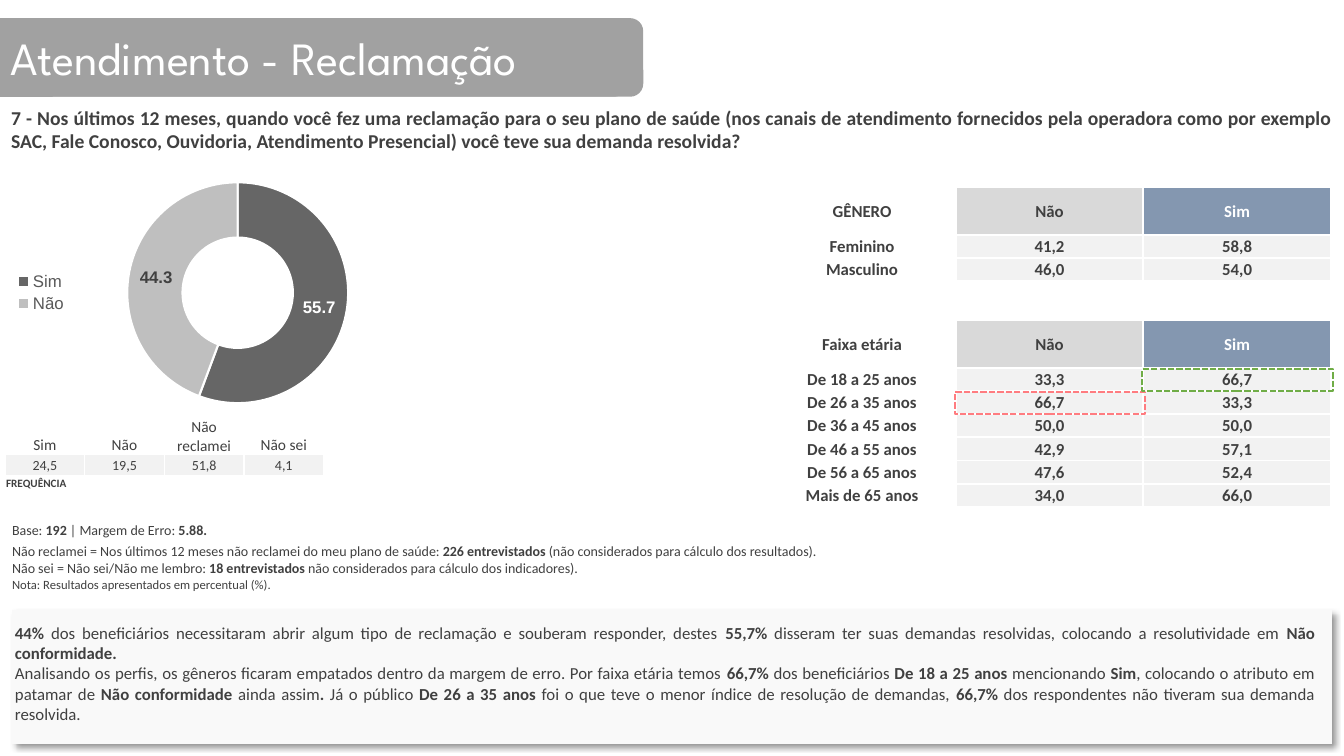
from lxml import etree
from pptx import Presentation
from pptx.chart.data import CategoryChartData
from pptx.dml.color import RGBColor
from pptx.enum.chart import XL_CHART_TYPE, XL_LEGEND_POSITION
from pptx.enum.dml import MSO_LINE
from pptx.enum.shapes import MSO_SHAPE
from pptx.enum.text import MSO_ANCHOR, MSO_AUTO_SIZE, PP_ALIGN
from pptx.oxml import parse_xml
from pptx.oxml.ns import nsdecls, qn
from pptx.util import Inches, Pt

DARK, WHITE, BANNER, PANEL = "404040", "FFFFFF", "A1A1A1", "F9F9F9"
NO_FILL, YES_FILL, VALUE_FILL = "D9D9D9", "8497B0", "F2F2F2"

TITLE = "Atendimento - Reclamação"
# Text between double asterisks is bold.
QUESTION = [
    "**7 - Nos últimos 12 meses, quando você fez uma reclamação para o seu plano de saúde "
    "(nos canais de atendimento fornecidos pela operadora como por exemplo SAC, Fale Conosco, "
    "Ouvidoria, Atendimento Presencial) você teve sua demanda resolvida?**"]
NOTES = [
    (10, 0.21, ["Base: **192** | Margem de Erro: **5.88.**"]),
    (10, 0.34, [
        "Não reclamei = Nos últimos 12 meses não reclamei do meu plano de saúde: "
        "**226 entrevistados **(não considerados para cálculo dos resultados).",
        "Não sei = Não sei/Não me lembro: **18 entrevistados** não considerados para "
        "cálculo dos indicadores)."]),
    (9, 0.21, ["Nota: Resultados apresentados em percentual (%)."]),
]
ANALYSIS = [
    "**44%** dos beneficiários necessitaram abrir algum tipo de reclamação e souberam responder, "
    "destes **55,7%** disseram ter suas demandas resolvidas, colocando a resolutividade em "
    "**Não conformidade.**",
    "Analisando os perfis, os gêneros ficaram empatados dentro da margem de erro. Por faixa etária "
    "temos **66,7% **dos beneficiários **De 18 a 25 anos **mencionando **Sim**, colocando o atributo "
    "em patamar de **Não conformidade **ainda assim**. **Já o público **De 26 a 35 anos **foi o que "
    "teve o menor índice de resolução de demandas, **66,7%** dos respondentes não tiveram sua "
    "demanda resolvida."]
PROFILES = [
    ("GÊNERO", "Não", "Sim"),
    ("Feminino", "41,2", "58,8"),
    ("Masculino", "46,0", "54,0"),
    ("", "", ""),
    ("Faixa etária", "Não", "Sim"),
    ("De 18 a 25 anos", "33,3", "66,7"),
    ("De 26 a 35 anos", "66,7", "33,3"),
    ("De 36 a 45 anos", "50,0", "50,0"),
    ("De 46 a 55 anos", "42,9", "57,1"),
    ("De 56 a 65 anos", "47,6", "52,4"),
    ("Mais de 65 anos", "34,0", "66,0"),
]
PROFILE_HEADERS, PROFILE_GAP = (0, 4), 3
PROFILE_LEFT, PROFILE_TOP, PROFILE_COLUMN = 7.62, 1.86, 1.86
HIGHLIGHTS = [(6, 1, "FF7C80"), (5, 2, "70AD47")]  # row, column, colour
FREQUENCY = [("Sim", "Não", "Não reclamei", "Não sei"),
             ("24,5", "19,5", "51,8", "4,1"),
             ("FREQUÊNCIA", "", "", "")]
ANSWERS = [("Sim", 55.7, "666666", WHITE), ("Não", 44.3, "BFBFBF", DARK)]
PLOT_LAYOUT = {"x": 0.3, "y": 0.06, "w": 0.56, "h": 0.88}


def color(value):
    return RGBColor.from_string(value)


def style_font(font, size, value=DARK, bold=False, name="Calibri"):
    font.name, font.size, font.bold = name, Pt(size), bold
    font.color.rgb = color(value)


def write(text_frame, lines, size, align=PP_ALIGN.LEFT, value=DARK):
    """Fill a text frame, switching bold at each double asterisk."""
    for number, line in enumerate(lines):
        paragraph = text_frame.add_paragraph() if number else text_frame.paragraphs[0]
        paragraph.alignment = align
        style_font(paragraph.font, size, value)
        for index, piece in enumerate(line.split("**")):
            if piece:
                run = paragraph.add_run()
                run.text = piece
                style_font(run.font, size, value, index % 2 == 1)
        if not line:
            etree.SubElement(paragraph._p, qn("a:endParaRPr"), sz=str(size * 100))


def add_box(shapes, preset, box, fill=None):
    shape = shapes.add_shape(preset, *map(Inches, box))
    shape.shadow.inherit = False
    shape.line.fill.background()
    if fill:
        shape.fill.solid()
        shape.fill.fore_color.rgb = color(fill)
    else:
        shape.fill.background()
    return shape


def add_text(shapes, box, lines, size, insets):
    text_frame = shapes.add_textbox(*map(Inches, box)).text_frame
    text_frame.word_wrap = True
    text_frame.margin_left = text_frame.margin_right = Inches(insets[0])
    text_frame.margin_top = text_frame.margin_bottom = Inches(insets[1])
    write(text_frame, lines, size, PP_ALIGN.JUSTIFY)


def add_plain_table(shapes, left, top, columns, rows):
    frame = shapes.add_table(len(rows), len(columns), *map(Inches, (left, top, sum(columns), sum(rows))))
    table = frame.table
    table.first_row = table.horz_banding = False
    for column, width in zip(table.columns, columns):
        column.width = Inches(width)
    for row, height in zip(table.rows, rows):
        row.height = Inches(height)
    return table


def fill_cell(cell, lines, size, align=PP_ALIGN.LEFT, value=DARK, fill=None,
              anchor=MSO_ANCHOR.TOP, border=0):
    cell.margin_left = cell.margin_right = cell.margin_top = Inches(0.01)
    cell.margin_bottom = 0
    cell.vertical_anchor = anchor
    write(cell.text_frame, lines, size, align, value)
    if border:
        for side in ("lnL", "lnR", "lnT", "lnB"):
            cell._tc.get_or_add_tcPr().append(parse_xml(
                f'<a:{side} {nsdecls("a")} w="{Pt(border)}"><a:solidFill>'
                f'<a:srgbClr val="{WHITE}"/></a:solidFill></a:{side}>'))
    if fill:
        cell.fill.solid()
        cell.fill.fore_color.rgb = color(fill)
    else:
        cell.fill.background()


presentation = Presentation()
presentation.slide_width, presentation.slide_height = Inches(13.33), Inches(7.5)
slide = presentation.slides.add_slide(presentation.slide_layouts[5])
shapes = slide.shapes

# Title banner and question
for left, width in ((-0.27, 6.49), (0, 6.38)):
    add_box(shapes, MSO_SHAPE.ROUNDED_RECTANGLE, (left, 0.18, width, 0.78), BANNER)
title = shapes.title
title.left, title.top, title.width, title.height = map(Inches, (0, 0.18, 6.38, 0.78))
title.element.getparent().append(title.element)
title.text_frame.text = TITLE
title.text_frame.auto_size = MSO_AUTO_SIZE.NONE
title.text_frame.vertical_anchor = MSO_ANCHOR.MIDDLE
title.text_frame.paragraphs[0].alignment = PP_ALIGN.LEFT
style_font(title.text_frame.paragraphs[0].runs[0].font, 33, WHITE, name="League Spartan")
add_text(shapes, (0, 0.99, 13.33, 0.58), QUESTION, 14, (0.11, 0.06))

# Notes
notes = add_plain_table(shapes, 0.11, 5.17, [9.76], [height for _, height, _ in NOTES])
for row, (size, _, lines) in enumerate(NOTES):
    fill_cell(notes.cell(row, 0), lines, size)

# Analysis panel
panel = add_box(shapes, MSO_SHAPE.RECTANGLE, (0.12, 6.05, 13.09, 1.33), PANEL)
panel._element.spPr.find(qn("a:effectLst")).append(parse_xml(
    f'<a:outerShdw {nsdecls("a")} blurRad="{Pt(4)}" dist="{Pt(3)}" dir="2700000" algn="tl" '
    'rotWithShape="0"><a:srgbClr val="000000"><a:alpha val="40000"/></a:srgbClr></a:outerShdw>'))
add_text(shapes, (0.05, 6.13, 13.09, 1.11), ANALYSIS, 12, (0.1, 0.05))

# Profile table with highlighted cells
heights = [0.47 if row in PROFILE_HEADERS else 0.39 if row == PROFILE_GAP else 0.23
           for row in range(len(PROFILES))]
profiles = add_plain_table(shapes, PROFILE_LEFT, PROFILE_TOP, [PROFILE_COLUMN] * 3, heights)
profiles.cell(PROFILE_GAP, 0).merge(profiles.cell(PROFILE_GAP, 2))
for row, values in enumerate(PROFILES):
    header = row in PROFILE_HEADERS
    fills = (None, NO_FILL, YES_FILL) if header else (None, VALUE_FILL, VALUE_FILL)
    for column, text in enumerate(values):
        fill_cell(profiles.cell(row, column), [f"**{text}**" if text else ""], 12, PP_ALIGN.CENTER,
                  WHITE if header and column == 2 else DARK,
                  None if row == PROFILE_GAP else fills[column], MSO_ANCHOR.MIDDLE, 1.5)
for row, column, value in HIGHLIGHTS:
    highlight = add_box(shapes, MSO_SHAPE.RECTANGLE, (
        PROFILE_LEFT + column * PROFILE_COLUMN - 0.01, PROFILE_TOP + sum(heights[:row]) + 0.01, 1.89, 0.22))
    highlight.line.color.rgb = color(value)
    highlight.line.width = Pt(1.5)
    highlight.line.dash_style = MSO_LINE.SQUARE_DOT

# Frequency table
frequency = add_plain_table(shapes, 0.05, 4.13, [0.79] * 4, [0.38, 0.21, 0.21])
frequency.cell(2, 0).merge(frequency.cell(2, 2))
frequency_styles = [(11, PP_ALIGN.CENTER, DARK, None, MSO_ANCHOR.BOTTOM, 1),
                    (10, PP_ALIGN.CENTER, DARK, VALUE_FILL, MSO_ANCHOR.MIDDLE, 1),
                    (8, PP_ALIGN.LEFT, DARK, None, MSO_ANCHOR.TOP, 1)]
for row, (values, style) in enumerate(zip(FREQUENCY, frequency_styles)):
    for column, text in enumerate(values):
        fill_cell(frequency.cell(row, column), [f"**{text}**" if row == 2 and text else text], *style)

# Doughnut chart
chart_data = CategoryChartData(number_format="0.0")
chart_data.categories = [answer[0] for answer in ANSWERS]
chart_data.add_series("Series 1", [answer[1] for answer in ANSWERS])
chart = shapes.add_chart(XL_CHART_TYPE.DOUGHNUT, *map(Inches, (0.05, 1.66, 3.98, 2.49)), chart_data).chart
style_font(chart.font, 10, "000000", name="Arial")
chart.has_title = False
chart.has_legend = True
chart.legend.position = XL_LEGEND_POSITION.LEFT
chart.legend.include_in_layout = False
style_font(chart.legend.font, 12, "595959", name="Arial")
plot = chart.plots[0]
plot.vary_by_categories = True
plot._element.find(qn("c:holeSize")).set("val", "50")
series = plot.series[0]
labels = series.data_labels
labels.show_value, labels.show_percentage = True, False
labels.number_format, labels.number_format_is_linked = "0.0", False
style_font(labels.font, 12, WHITE, True, "Arial")
for index, (_, _, fill, label_color) in enumerate(ANSWERS):
    point = series.points[index]
    point.format.fill.solid()
    point.format.fill.fore_color.rgb = color(fill)
    point.format.line.color.rgb = color(WHITE)
    point.format.line.width = Pt(1.5)
    style_font(point.data_label.font, 12, label_color, True, "Arial")
plot_area = chart._chartSpace.chart.plotArea
for layout in plot_area.findall(qn("c:layout")):
    plot_area.remove(layout)
sizes = "".join(f'<c:{key} val="{value}"/>' for key, value in PLOT_LAYOUT.items())
plot_area.insert(0, parse_xml(
    f'<c:layout {nsdecls("c")}><c:manualLayout><c:layoutTarget val="inner"/>'
    f'<c:xMode val="edge"/><c:yMode val="edge"/>{sizes}</c:manualLayout></c:layout>'))

presentation.save("out.pptx")
